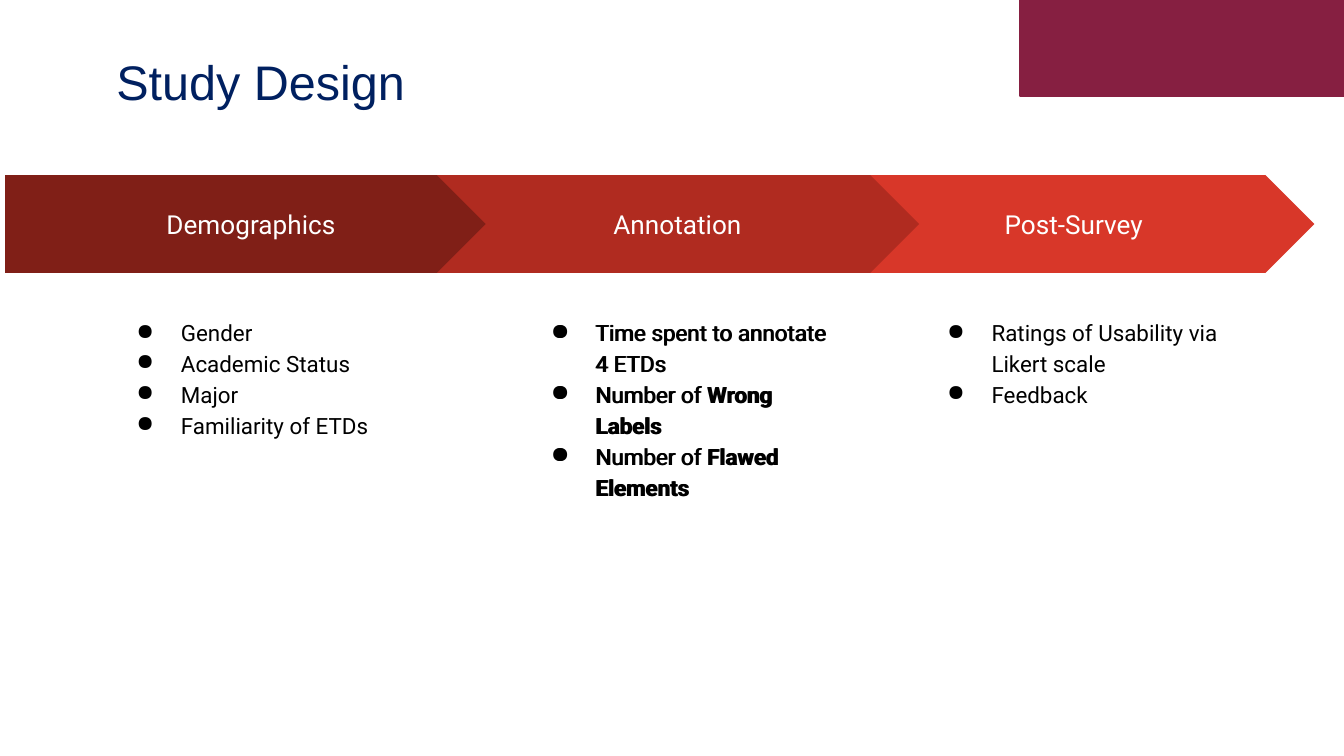
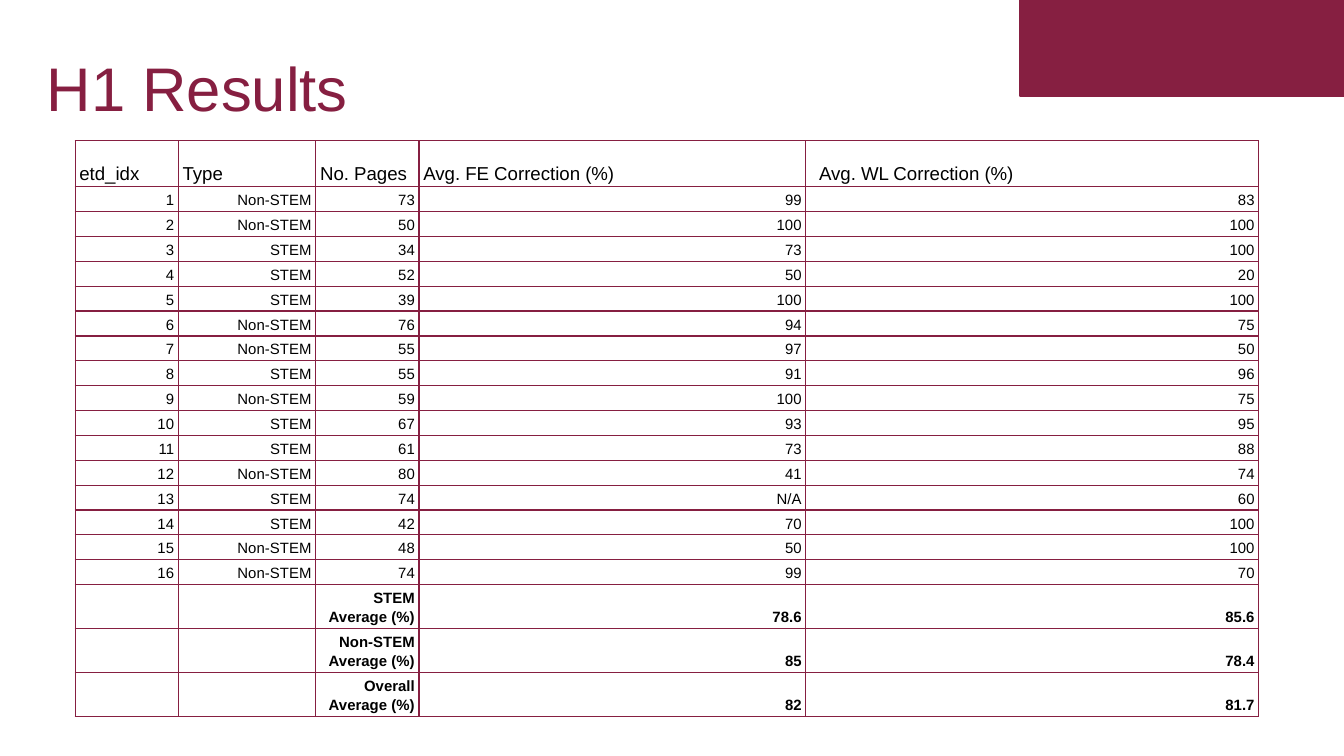
from lxml.etree import SubElement
from pptx import Presentation
from pptx.dml.color import RGBColor
from pptx.enum.shapes import MSO_SHAPE as Shape
from pptx.enum.text import MSO_ANCHOR as Anchor, MSO_AUTO_SIZE as AutoSize, PP_ALIGN as Align
from pptx.oxml.ns import qn
from pptx.util import Cm, Pt

# Shared style
MAROON, NAVY, BLACK, WHITE = "861F41", "002060", "000000", "FFFFFF"
BODY_FONT, TITLE_FONT = "Roboto", "Arial"

# Study design: label, shape, colour, left edge of the arrow, width, indent of the list, items.
# Each item is a list of (text, bold) runs.
ANNOTATION_ITEMS = [
    [("Time spent to annotate 4 ETDs", False)],
    [("Number of ", False), ("Wrong Labels", True)],
    [("Number of ", False), ("Flawed Elements", True)],
]
ANNOTATION = ("Annotation", Shape.CHEVRON, "B02B20")
STAGES = [
    ("Post-Survey", Shape.CHEVRON, "D83729", 15.75, 9.09, 1.47,
     [[("Ratings of Usability via Likert scale", False)], [("Feedback", False)]]),
    ("Demographics", Shape.PENTAGON, "801F17", 0.1, 9.75, 1.8,
     [[(item, False)] for item in
      ("Gender", "Academic Status", "Major", "Familiarity of ETDs")]),
    (*ANNOTATION, 8.28, 9.09, 1.47, ANNOTATION_ITEMS),
    (*ANNOTATION, 8.26, 9.09, 1.47, ANNOTATION_ITEMS),
]

# H1 results
HEADERS = ["etd_idx", "Type", "No. Pages", "Avg. FE Correction (%)", "Avg. WL Correction (%)"]
DOCUMENTS = [
    ("Non-STEM", 73, 99, 83),
    ("Non-STEM", 50, 100, 100),
    ("STEM", 34, 73, 100),
    ("STEM", 52, 50, 20),
    ("STEM", 39, 100, 100),
    ("Non-STEM", 76, 94, 75),
    ("Non-STEM", 55, 97, 50),
    ("STEM", 55, 91, 96),
    ("Non-STEM", 59, 100, 75),
    ("STEM", 67, 93, 95),
    ("STEM", 61, 73, 88),
    ("Non-STEM", 80, 41, 74),
    ("STEM", 74, "N/A", 60),
    ("STEM", 42, 70, 100),
    ("Non-STEM", 48, 50, 100),
    ("Non-STEM", 74, 99, 70),
]
AVERAGES = [
    ("STEM Average (%)", 78.6, 85.6),
    ("Non-STEM Average (%)", 85, 78.4),
    ("Overall Average (%)", 82, 81.7),
]
COLUMN_WIDTHS = [1.95, 2.6, 1.95, 7.31, 8.56]
HEADER_HEIGHT, DOCUMENT_HEIGHT, AVERAGE_HEIGHT = 0.87, 0.47, 0.83


def rgb(value):
    return RGBColor.from_string(value)


def set_font(paragraph, name, size, color, bold=None):
    font = paragraph.font
    font.name, font.size, font.bold = name, Pt(size), bold
    font.color.rgb = rgb(color)


def set_margins(target, horizontal, vertical):
    target.margin_left = target.margin_right = Cm(horizontal)
    target.margin_top = target.margin_bottom = Cm(vertical)


def add_block(slide, kind, left, top, width, height, color):
    shape = slide.shapes.add_shape(kind, Cm(left), Cm(top), Cm(width), Cm(height))
    shape.shadow.inherit = False
    shape.fill.solid()
    shape.fill.fore_color.rgb = rgb(color)
    shape.line.fill.background()
    return shape


def add_slide(presentation, title, left, top, width, size, color):
    """Title-only slide with the maroon corner block."""
    slide = presentation.slides.add_slide(presentation.slide_layouts[5])
    corner = add_block(slide, Shape.RECTANGLE, 19.28, -0.03, 6.12, 1.84, MAROON)
    corner.line.color.rgb = rgb(MAROON)
    corner.line.width = Pt(1)

    holder = slide.shapes.title
    holder.left, holder.top, holder.width, holder.height = Cm(left), Cm(top), Cm(width), Cm(3.2)
    frame = holder.text_frame
    frame.text = title
    frame.auto_size = AutoSize.NONE
    frame.vertical_anchor = Anchor.MIDDLE
    set_margins(frame, 0.19, 0.1)
    paragraph = frame.paragraphs[0]
    paragraph.alignment = Align.LEFT
    paragraph.line_spacing = 0.9
    set_font(paragraph, TITLE_FONT, size, color)
    return slide


def add_bullet(paragraph):
    properties = paragraph._p.get_or_add_pPr()
    properties.set("marL", str(Cm(1.27)))
    properties.set("indent", str(-Cm(0.84)))
    bullet_color = SubElement(properties, qn("a:buClr"))
    SubElement(bullet_color, qn("a:srgbClr"), val=BLACK)
    SubElement(properties, qn("a:buChar"), char="●")


def add_stage(slide, label, kind, color, left, width, indent, items):
    # Arrow
    arrow = add_block(slide, kind, left, 3.31, width, 1.85, color)
    frame = arrow.text_frame
    frame.text = label
    frame.vertical_anchor = Anchor.MIDDLE
    set_margins(frame, 0.25, 0.25)
    frame.paragraphs[0].alignment = Align.CENTER
    set_font(frame.paragraphs[0], BODY_FONT, 14, WHITE)

    # Bulleted list below it
    box = slide.shapes.add_textbox(Cm(left + indent), Cm(5.71), Cm(6.15), Cm(7.26))
    frame = box.text_frame
    frame.word_wrap = True
    set_margins(frame, 0.25, 0.25)
    for index, runs in enumerate(items):
        paragraph = frame.add_paragraph() if index else frame.paragraphs[0]
        paragraph.line_spacing = 1.15
        add_bullet(paragraph)
        set_font(paragraph, BODY_FONT, 12, BLACK)
        for text, bold in runs:
            run = paragraph.add_run()
            run.text = text
            if bold:
                run.font.bold = True


def add_borders(cell):
    properties = cell._tc.get_or_add_tcPr()
    for position, side in enumerate(("lnL", "lnR", "lnT", "lnB")):
        line = properties.makeelement(qn(f"a:{side}"), {"w": str(Pt(0.75))})
        fill = SubElement(line, qn("a:solidFill"))
        SubElement(fill, qn("a:srgbClr"), val=MAROON)
        properties.insert(position, line)


def fill_cell(cell, value, size, alignment, bold):
    cell.text = str(value)
    cell.fill.solid()
    cell.fill.fore_color.rgb = rgb(WHITE)
    cell.vertical_anchor = Anchor.BOTTOM
    set_margins(cell, 0.08, 0.05)
    add_borders(cell)
    paragraph = cell.text_frame.paragraphs[0]
    paragraph.alignment = alignment
    paragraph.line_spacing = 1.15
    set_font(paragraph, TITLE_FONT, size, BLACK, bold)
    if value == "":  # keeps an empty cell from growing its row
        SubElement(paragraph._p, qn("a:endParaRPr"), sz=str(size * 100))


def add_results_table(slide):
    # Each row: values, height, font size, alignment, bold
    rows = [(HEADERS, HEADER_HEIGHT, 10, Align.LEFT, None)]
    rows += [((number, *document), DOCUMENT_HEIGHT, 8, Align.RIGHT, None)
             for number, document in enumerate(DOCUMENTS, 1)]
    rows += [(("", "", *average), AVERAGE_HEIGHT, 8, Align.RIGHT, True) for average in AVERAGES]

    height = sum(row[1] for row in rows)
    table = slide.shapes.add_table(len(rows), len(HEADERS), Cm(1.42), Cm(2.66),
                                   Cm(sum(COLUMN_WIDTHS)), Cm(height)).table
    table.first_row = table.horz_banding = False
    for column, width in zip(table.columns, COLUMN_WIDTHS):
        column.width = Cm(width)
    for row, (values, row_height, size, alignment, bold) in zip(table.rows, rows):
        row.height = Cm(row_height)
        for cell, value in zip(row.cells, values):
            fill_cell(cell, value, size, alignment, bold)
    set_margins(table.cell(0, len(HEADERS) - 1), 0.25, 0.05)


def main():
    presentation = Presentation()
    presentation.slide_width, presentation.slide_height = Cm(25.4), Cm(14.29)

    # Study design
    slide = add_slide(presentation, "Study Design", 2.01, 0, 21.9, 26, NAVY)
    for stage in STAGES:
        add_stage(slide, *stage)

    # H1 results
    slide = add_slide(presentation, "H1 Results", 0.69, 0.13, 19.89, 33, MAROON)
    add_results_table(slide)

    presentation.save("out.pptx")


if __name__ == "__main__":
    main()
